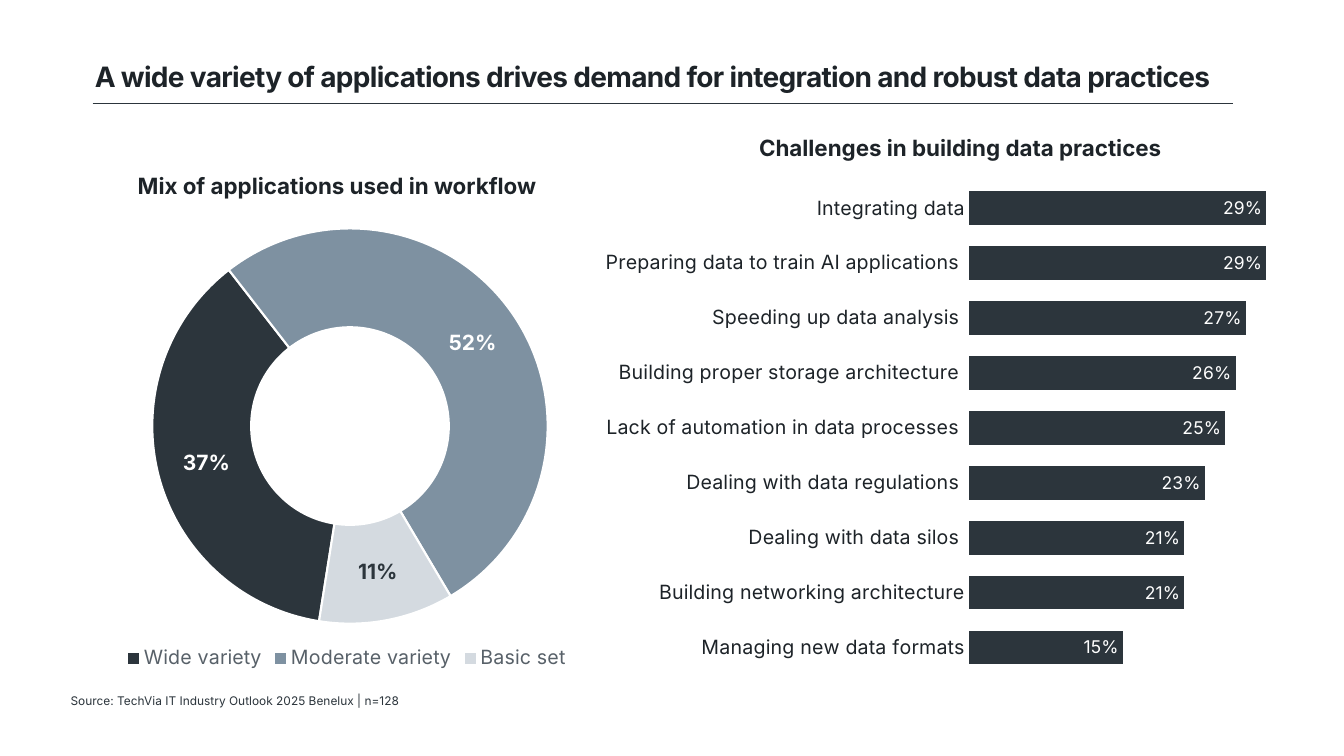
from dataclasses import dataclass

from lxml.etree import SubElement
from pptx import Presentation
from pptx.chart.data import CategoryChartData
from pptx.dml.color import RGBColor
from pptx.enum.chart import XL_CHART_TYPE as ChartType
from pptx.enum.chart import XL_LABEL_POSITION as LabelPosition
from pptx.enum.chart import XL_LEGEND_POSITION as LegendPosition
from pptx.enum.chart import XL_TICK_MARK as TickMark
from pptx.enum.shapes import MSO_CONNECTOR as Connector
from pptx.enum.text import MSO_ANCHOR as Anchor
from pptx.enum.text import MSO_AUTO_SIZE as AutoSize
from pptx.enum.text import PP_ALIGN as Align
from pptx.oxml import parse_xml
from pptx.oxml.ns import nsdecls, qn
from pptx.util import Inches, Pt


@dataclass(frozen=True)
class Theme:
    """Colours, font and type sizes of the slide."""

    font: str = "Inter"
    ink: str = "1D2328"
    dark: str = "2C353C"
    steel: str = "7E91A1"
    pale: str = "D4DAE0"
    grey: str = "586169"
    white: str = "FFFFFF"
    title: float = 20
    heading: float = 16
    share: float = 15
    axis: float = 14
    bar: float = 12.5
    source: float = 8.5


THEME = Theme()
WIDTH, HEIGHT = Inches(13.33), Inches(7.5)
APPLICATION_MIX = {
    "Wide variety": (0.37, THEME.dark, THEME.white),
    "Moderate variety": (0.52, THEME.steel, THEME.white),
    "Basic set": (0.11, THEME.pale, THEME.dark),
}
CHALLENGES = {
    "Managing new data formats": 0.15,
    "Building networking architecture": 0.21,
    "Dealing with data silos ": 0.21,
    "Dealing with data regulations ": 0.23,
    "Lack of automation in data processes ": 0.25,
    "Building proper storage architecture ": 0.26,
    "Speeding up data analysis ": 0.27,
    "Preparing data to train AI applications ": 0.29,
    "Integrating data": 0.29,
}


def area(left, top, width, height):
    """Turn percentages of the slide into a left, top, width, height box."""
    return [int(size * part / 100) for size, part in
            ((WIDTH, left), (HEIGHT, top), (WIDTH, width), (HEIGHT, height))]


def style_font(font, size, color, bold=False):
    """Give a font the theme face, a size, a colour and a weight."""
    font.name, font.size, font.bold = THEME.font, Pt(size), bold
    font.color.rgb = RGBColor.from_string(color)


def paint(fill, color):
    """Fill with one solid colour."""
    fill.solid()
    fill.fore_color.rgb = RGBColor.from_string(color)


def write(shape, text, *, size, color=THEME.ink, bold=False, align=Align.LEFT,
          anchor=Anchor.TOP, fit=AutoSize.NONE, inset=None, leading=None, tracking=None):
    """Write formatted text into a shape."""
    frame = shape.text_frame
    frame.word_wrap, frame.auto_size, frame.vertical_anchor = True, fit, anchor
    if inset is not None:
        frame.margin_left = frame.margin_right = inset
        frame.margin_top = frame.margin_bottom = inset
    paragraph = frame.paragraphs[0]
    paragraph.alignment = align
    if leading:
        paragraph.line_spacing = leading
    run = paragraph.add_run()
    run.text = text
    style_font(run.font, size, color, bold)
    if tracking:
        run.font._element.set("spc", str(int(tracking * 100)))


def add_title(slide, text):
    """Place the slide title and the rule beneath it."""
    title = slide.shapes.title
    title.left, title.top, title.width, title.height = area(6.3, 5.73, 89.27, 9.33)
    write(title, text, size=THEME.title, bold=True, anchor=Anchor.MIDDLE,
          leading=0.9, tracking=-0.5)
    start, level, end, _ = area(6.9, 13.73, 91.75, 0)
    rule = slide.shapes.add_connector(Connector.STRAIGHT, start, level, end, level)
    rule.line.color.rgb = RGBColor.from_string(THEME.dark)
    rule.line.width = Pt(1)
    SubElement(rule._element.spPr, qn("a:effectLst"))


def add_heading(slide, text, box):
    """Add a centred chart heading."""
    write(slide.shapes.add_textbox(*box), text, size=THEME.heading, bold=True,
          align=Align.CENTER, fit=AutoSize.SHAPE_TO_FIT_TEXT)


def add_chart(slide, kind, categories, values, box, plot_box):
    """Add a one-series percentage chart with a fixed inner plot area."""
    data = CategoryChartData(number_format="0%")
    data.categories = categories
    data.add_series("Series 1", values)
    chart = slide.shapes.add_chart(kind, *box, data).chart
    chart.has_title = chart.has_legend = False
    style_font(chart.font, THEME.axis, THEME.grey)
    plot_area = chart.element.xpath("c:chart/c:plotArea")[0]
    for layout in plot_area.findall(qn("c:layout")):
        plot_area.remove(layout)
    sizes = "".join(f'<c:{name} val="{part}"/>' for name, part in zip("xywh", plot_box))
    plot_area.insert(0, parse_xml(
        f'<c:layout {nsdecls("c")}><c:manualLayout><c:layoutTarget val="inner"/>'
        f'<c:xMode val="edge"/><c:yMode val="edge"/>{sizes}</c:manualLayout></c:layout>'))
    return chart


def label_values(series, size, bold=False):
    """Show the series values as whole percentages."""
    labels = series.data_labels
    labels.show_value = True
    labels.number_format, labels.number_format_is_linked = "0%", False
    style_font(labels.font, size, THEME.white, bold)
    return labels


def add_mix_doughnut(slide, box):
    """Add the doughnut of application mix with its legend."""
    shares, fills, inks = zip(*APPLICATION_MIX.values())
    chart = add_chart(slide, ChartType.DOUGHNUT, APPLICATION_MIX, shares, box,
                      (0.19, 0.03, 0.63, 0.86))
    chart.plots[0].vary_by_categories = True
    for tag, value in (("firstSliceAng", 189), ("holeSize", 54)):
        chart.element.xpath(f".//c:{tag}")[0].set("val", str(value))
    chart.has_legend = True
    chart.legend.position = LegendPosition.BOTTOM
    chart.legend.include_in_layout = False
    style_font(chart.legend.font, THEME.axis, THEME.grey)
    mix = chart.plots[0].series[0]
    label_values(mix, THEME.share, bold=True)
    for index, (fill, ink) in enumerate(zip(fills, inks)):
        slice_ = mix.points[index]
        paint(slice_.format.fill, fill)
        slice_.format.line.color.rgb = RGBColor.from_string(THEME.white)
        slice_.format.line.width = Pt(1.5)
        style_font(slice_.data_label.font, THEME.share, ink, bold=True)


def add_challenge_bars(slide, box):
    """Add the bar chart of data practice challenges."""
    chart = add_chart(slide, ChartType.BAR_CLUSTERED, CHALLENGES, CHALLENGES.values(),
                      box, (0.54, 0.03, 0.41, 0.96))
    plot = chart.plots[0]
    plot.vary_by_categories = False
    plot.gap_width, plot.overlap = 64, -7
    paint(plot.series[0].format.fill, THEME.dark)
    label_values(plot.series[0], THEME.bar).position = LabelPosition.INSIDE_END
    names, scale = chart.category_axis, chart.value_axis
    names.major_tick_mark = names.minor_tick_mark = TickMark.NONE
    names.format.line.fill.background()
    style_font(names.tick_labels.font, THEME.axis, THEME.ink)
    scale.minimum_scale, scale.maximum_scale = 0, 0.31
    scale.has_major_gridlines = scale.visible = False


def main():
    """Build and save the slide."""
    deck = Presentation()
    deck.slide_width, deck.slide_height = WIDTH, HEIGHT
    slide = deck.slides.add_slide(deck.slide_layouts.get_by_name("Title Only"))
    add_title(slide, "A wide variety of applications drives demand for integration "
                     "and robust data practices")
    add_mix_doughnut(slide, area(1.65, 28.4, 48.3, 60.8))
    add_heading(slide, "Mix of applications used in workflow", area(9.3, 22.13, 31.58, 4.93))
    add_challenge_bars(slide, area(40.96, 21.87, 57.69, 68.13))
    add_heading(slide, "Challenges in building data practices",
                area(53.94, 17.07, 35.03, 4.93))
    write(slide.shapes.add_textbox(*area(5.25, 91.33, 52.5, 2.67)),
          "Source: TechVia IT Industry Outlook 2025 Benelux | n=128",
          size=THEME.source, color=THEME.dark, anchor=Anchor.MIDDLE, inset=0)
    deck.save("out.pptx")


if __name__ == "__main__":
    main()
